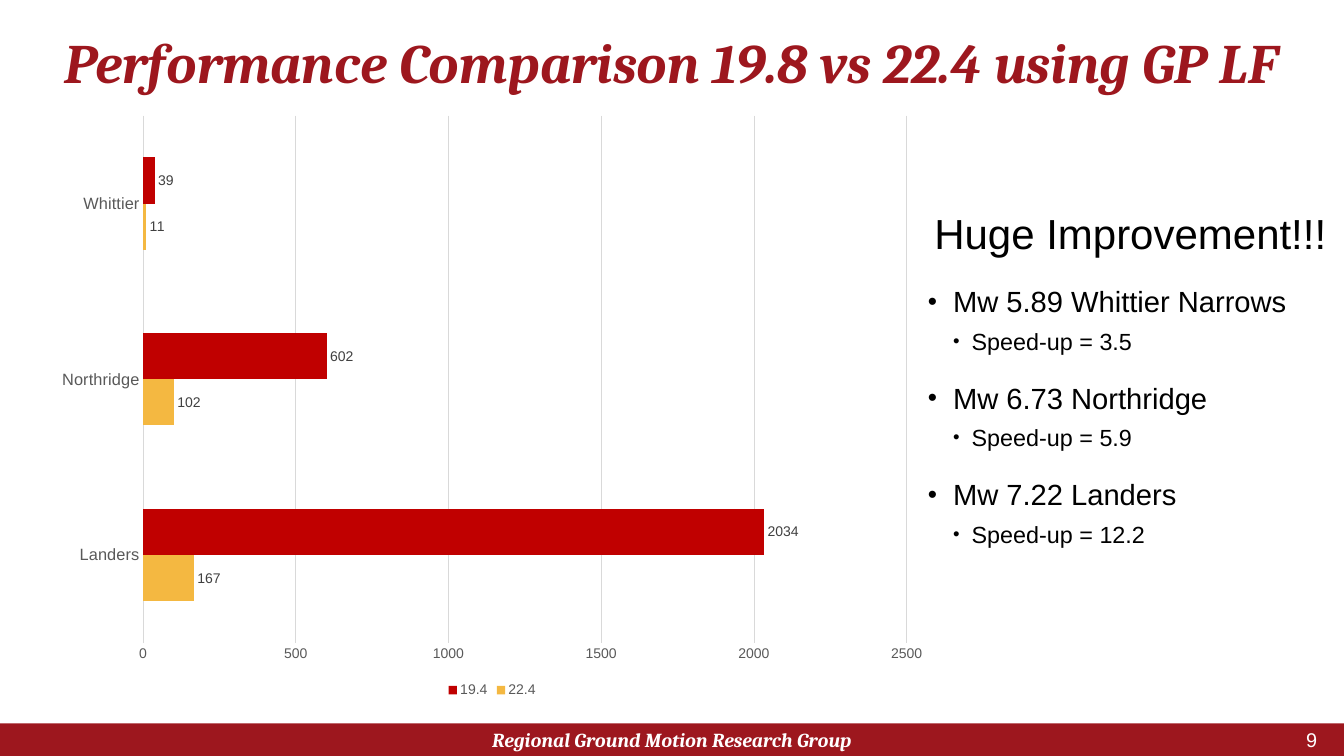
"""Build the slide comparing run times of versions 19.4 and 22.4."""
import pptx
import pptx.chart.data
import pptx.dml.color
import pptx.enum.chart
import pptx.enum.shapes
import pptx.enum.text
import pptx.oxml
import pptx.util

Pt = pptx.util.Pt
RGBColor = pptx.dml.color.RGBColor
Align = pptx.enum.text.PP_ALIGN
Anchor = pptx.enum.text.MSO_ANCHOR
CARDINAL = RGBColor(0x9D, 0x17, 0x1E)
RED = RGBColor(0xC0, 0x00, 0x00)
GOLD = RGBColor(0xF4, 0xB8, 0x41)
WHITE = RGBColor(0xFF, 0xFF, 0xFF)
BLACK = RGBColor(0x00, 0x00, 0x00)
AXIS_GREY = RGBColor(0x59, 0x59, 0x59)
LABEL_GREY = RGBColor(0x40, 0x40, 0x40)
GRID_GREY = RGBColor(0xD9, 0xD9, 0xD9)

TITLE = "Performance Comparison 19.8 vs 22.4 using GP LF"
CENTER_NAME = "Regional Ground Motion Research Group"
PAGE = "9"
HEADLINE = "Huge Improvement!!!"
SPEEDUPS = [
    ("Mw 5.89 Whittier Narrows", "Speed-up = 3.5"),
    ("Mw 6.73 Northridge", "Speed-up = 5.9"),
    ("Mw 7.22 Landers", "Speed-up = 12.2"),
]
EARTHQUAKES = ["Landers", "Northridge", "Whittier"]
RUNTIMES = [("22.4", (167, 102, 11), GOLD), ("19.4", (2034, 602, 39), RED)]

WIDTH, HEIGHT = 1152, 648
FOOTER_TOP = 620
TITLE_BOX = (28.8, 25.9, 1094.4, 60.5)
CENTER_BOX = (381.6, 617, 388.8, 34.6)
PAGE_BOX = (1029.6, 625.7, 108, 17.3)
CHART_BOX = (37.8, 88.9, 768.2, 511.9)
SPEEDUP_BOX = (786, 174, 365.8, 324)
EVENT = dict(size=25, before=21.6, indent=(22.3, -21.6), bullet=90)
SPEEDUP = dict(size=20, before=7.2, indent=(38.2, -15.8), bullet=80, level=1)


def style_font(font, size, color, name="Arial", strong=False):
    font.name, font.size = name, Pt(size)
    font.bold = font.italic = strong
    font.color.rgb = color


def add_frame(slide, box, anchor=Anchor.TOP):
    frame = slide.shapes.add_textbox(*map(Pt, box)).text_frame
    frame.word_wrap = True
    frame.vertical_anchor = anchor
    frame.margin_left = frame.margin_right = Pt(8.64)
    frame.margin_top = frame.margin_bottom = Pt(4.32)
    return frame


def write(frame, text, size, color=BLACK, name="Arial", strong=False, align=Align.LEFT,
          before=0, spacing=1.0, indent=(0, 0), bullet=None, level=0):
    first = frame.paragraphs[0]
    line = frame.add_paragraph() if first.runs else first
    line.alignment, line.level = align, level
    line.space_before, line.line_spacing = Pt(before), spacing
    run = line.add_run()
    run.text = text
    style_font(run.font, size, color, name, strong)
    properties = line._p.get_or_add_pPr()
    properties.set("marL", str(Pt(indent[0])))
    properties.set("indent", str(Pt(indent[1])))
    if bullet:
        namespace = pptx.oxml.ns.nsdecls("a")
        for xml in (f'<a:buClr {namespace}><a:srgbClr val="{color}"/></a:buClr>',
                    f'<a:buSzPct {namespace} val="{bullet * 1000}"/>',
                    f'<a:buFont {namespace} typeface="Arial"/>',
                    f'<a:buChar {namespace} char="•"/>'):
            properties.append(pptx.oxml.parse_xml(xml))


def add_runtime_chart(slide):
    data = pptx.chart.data.CategoryChartData()
    data.categories = EARTHQUAKES
    for version, runtimes, _ in RUNTIMES:
        data.add_series(version, runtimes)
    kinds = pptx.enum.chart
    chart = slide.shapes.add_chart(
        kinds.XL_CHART_TYPE.BAR_CLUSTERED, *map(Pt, CHART_BOX), data).chart
    style_font(chart.font, 10, BLACK)
    chart.has_title = False
    chart.has_legend = True
    chart.legend.position = kinds.XL_LEGEND_POSITION.BOTTOM
    chart.legend.include_in_layout = False
    style_font(chart.legend.font, 12, AXIS_GREY)

    for axis, size in ((chart.category_axis, 14), (chart.value_axis, 12)):
        axis.major_tick_mark = axis.minor_tick_mark = kinds.XL_TICK_MARK.NONE
        style_font(axis.tick_labels.font, size, AXIS_GREY)
    chart.category_axis.has_major_gridlines = False
    chart.value_axis.has_major_gridlines = True
    chart.value_axis.format.line.fill.background()
    for line in (chart.category_axis.format.line,
                 chart.value_axis.major_gridlines.format.line):
        line.color.rgb, line.width = GRID_GREY, Pt(0.75)

    plot = chart.plots[0]
    plot.gap_width, plot.overlap, plot.vary_by_categories = 182, 0, False
    for series, (_, _, color) in zip(plot.series, RUNTIMES):
        series.format.fill.solid()
        series.format.fill.fore_color.rgb = color
        labels = series.data_labels
        labels.show_value = True
        labels.position = kinds.XL_LABEL_POSITION.OUTSIDE_END
        style_font(labels.font, 12, LABEL_GREY)


def main():
    deck = pptx.Presentation()
    deck.slide_width, deck.slide_height = Pt(WIDTH), Pt(HEIGHT)
    slide = deck.slides.add_slide(deck.slide_layouts[6])

    footer = slide.shapes.add_shape(
        pptx.enum.shapes.MSO_SHAPE.RECTANGLE,
        0, Pt(FOOTER_TOP), Pt(WIDTH), Pt(HEIGHT - FOOTER_TOP))
    footer.shadow.inherit = False
    footer.fill.solid()
    footer.fill.fore_color.rgb = CARDINAL
    footer.line.fill.background()

    write(add_frame(slide, TITLE_BOX), TITLE, 47.7, color=CARDINAL, name="Cambria",
          strong=True, align=Align.CENTER, spacing=0.9)
    write(add_frame(slide, CENTER_BOX, Anchor.MIDDLE), CENTER_NAME, 17, color=WHITE,
          name="Cambria", strong=True, align=Align.CENTER)
    write(add_frame(slide, PAGE_BOX, Anchor.MIDDLE), PAGE, 17, color=WHITE,
          align=Align.RIGHT)
    add_runtime_chart(slide)

    speedups = add_frame(slide, SPEEDUP_BOX)
    write(speedups, HEADLINE, 36, align=Align.CENTER, before=21.6)
    for event, speedup in SPEEDUPS:
        write(speedups, event, **EVENT)
        write(speedups, speedup, **SPEEDUP)
    deck.save("out.pptx")


if __name__ == "__main__":
    main()
